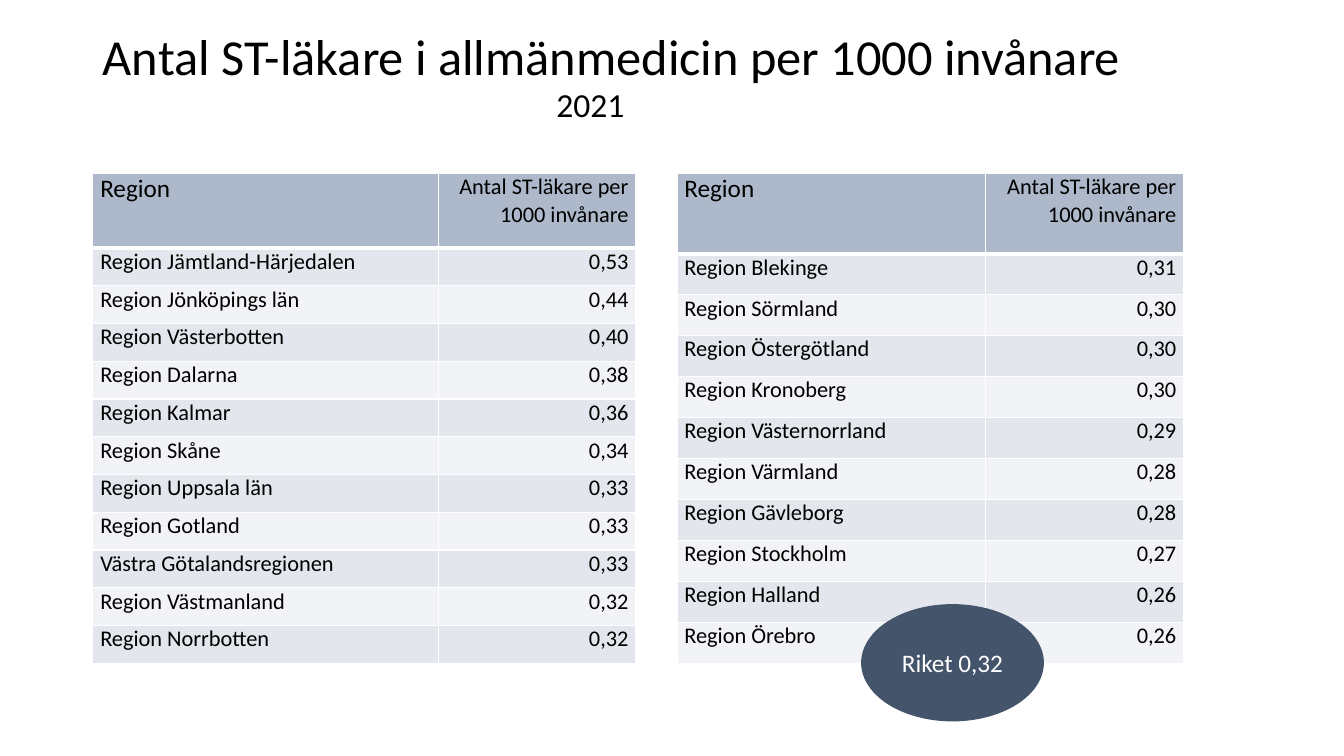
"""Build a slide comparing the number of GP trainees per 1000 inhabitants by region."""
from dataclasses import dataclass

from lxml.etree import SubElement
from pptx import Presentation
from pptx.dml.color import RGBColor
from pptx.enum.shapes import MSO_SHAPE as SHAPE
from pptx.enum.text import MSO_ANCHOR as ANCHOR, PP_ALIGN as ALIGN
from pptx.oxml.ns import qn
from pptx.util import Pt

BLACK = RGBColor(0x00, 0x00, 0x00)
WHITE = RGBColor(0xFF, 0xFF, 0xFF)
SLATE = RGBColor(0x44, 0x54, 0x6A)
HEADER = RGBColor(0xAD, 0xB9, 0xCA)
BANDS = (RGBColor(0xF1, 0xF3, 0xF6), RGBColor(0xE3, 0xE6, 0xEC))
FONT = "Calibri"
TABLE_TOP, TABLE_HEIGHT = 123.84, 350


@dataclass
class RegionTable:
    left: float
    widths: tuple[float, float]
    header_height: float
    inset: float
    rows: list[tuple[str, str]]


@dataclass
class Heading:
    index: int
    text: str
    size: float
    box: tuple[float, float, float, float]
    margin_top: float


TABLES = [
    RegionTable(66.24, (246.96, 141.12), 53.3, 5.4, [
        ("Region Jämtland-Härjedalen", "0,53"),
        ("Region Jönköpings län", "0,44"),
        ("Region Västerbotten", "0,40"),
        ("Region Dalarna", "0,38"),
        ("Region Kalmar", "0,36"),
        ("Region Skåne", "0,34"),
        ("Region Uppsala län", "0,33"),
        ("Region Gotland", "0,33"),
        ("Västra Götalandsregionen", "0,33"),
        ("Region Västmanland", "0,32"),
        ("Region Norrbotten", "0,32"),
    ]),
    RegionTable(483.84, (220.32, 141.12), 57.4, 5.04, [
        ("Region Blekinge", "0,31"),
        ("Region Sörmland", "0,30"),
        ("Region Östergötland", "0,30"),
        ("Region Kronoberg", "0,30"),
        ("Region Västernorrland", "0,29"),
        ("Region Värmland", "0,28"),
        ("Region Gävleborg", "0,28"),
        ("Region Stockholm", "0,27"),
        ("Region Halland", "0,26"),
        ("Region Örebro", "0,26"),
    ]),
]
HEADINGS = [
    Heading(0, "Antal ST-läkare i allmänmedicin per 1000 invånare", 36, (66.24, 23.04, 828, 73.44), 0),
    Heading(1, "2021", 24, (390.24, 59.76, 828, 33.12), 3.6),
]


def write(tf, text: str, size: float, color: RGBColor = BLACK, align=ALIGN.LEFT):
    p = tf.paragraphs[0]
    p.alignment = align
    r = p.add_run()
    r.text = text
    r.font.name, r.font.size = FONT, Pt(size)
    r.font.color.rgb = color
    return p


def add_borders(cell, bottom: float) -> None:
    tc_pr = cell._tc.get_or_add_tcPr()
    for side, width in (("L", 1), ("R", 1), ("T", 1), ("B", bottom)):
        ln = SubElement(tc_pr, qn(f"a:ln{side}"), w=str(Pt(width)))
        fill = SubElement(ln, qn("a:solidFill"))
        SubElement(fill, qn("a:srgbClr"), val=str(WHITE))


def add_heading(slide, heading: Heading) -> None:
    sp = slide.placeholders[heading.index]
    sp.left, sp.top, sp.width, sp.height = (Pt(v) for v in heading.box)
    tf = sp.text_frame
    tf.word_wrap = True
    tf.vertical_anchor = ANCHOR.TOP
    tf.margin_top = Pt(heading.margin_top)
    p = write(tf, heading.text, heading.size)
    p.line_spacing = 0.9
    p.space_before = Pt(0)


def add_region_table(slide, spec: RegionTable) -> None:
    rows = [("Region", "Antal ST-läkare per 1000 invånare"), *spec.rows]
    table = slide.shapes.add_table(len(rows), 2, Pt(spec.left), Pt(TABLE_TOP),
                                   Pt(sum(spec.widths)), Pt(TABLE_HEIGHT)).table
    table.first_row = table.horz_banding = False
    for column, width in zip(table.columns, spec.widths):
        column.width = Pt(width)
    body_height = (TABLE_HEIGHT - spec.header_height) / len(spec.rows)
    for i, row in enumerate(rows):
        table.rows[i].height = Pt(body_height if i else spec.header_height)
        for j, text in enumerate(row):
            cell = table.cell(i, j)
            cell.margin_left = cell.margin_right = Pt(spec.inset)
            cell.margin_top = cell.margin_bottom = Pt(0)
            add_borders(cell, 1 if i else 3)
            cell.fill.solid()
            cell.fill.fore_color.rgb = BANDS[i % 2] if i else HEADER
            write(cell.text_frame, text, 16 if i or j else 18,
                  align=ALIGN.RIGHT if j else ALIGN.LEFT)


def add_national_figure(slide) -> None:
    sp = slide.shapes.add_shape(SHAPE.OVAL, Pt(615.6), Pt(432), Pt(129.6), Pt(82.8))
    sp.shadow.inherit = False
    sp.fill.solid()
    sp.fill.fore_color.rgb = SLATE
    sp.line.color.rgb = SLATE
    sp.line.width = Pt(1)
    sp.text_frame.vertical_anchor = ANCHOR.MIDDLE
    write(sp.text_frame, "Riket 0,32", 18, WHITE, ALIGN.CENTER)


def main() -> None:
    prs = Presentation()
    prs.slide_width, prs.slide_height = Pt(960), Pt(540)
    slide = prs.slides.add_slide(prs.slide_layouts[0])
    for heading in HEADINGS:
        add_heading(slide, heading)
    for spec in TABLES:
        add_region_table(slide, spec)
    add_national_figure(slide)
    prs.save("out.pptx")


if __name__ == "__main__":
    main()
